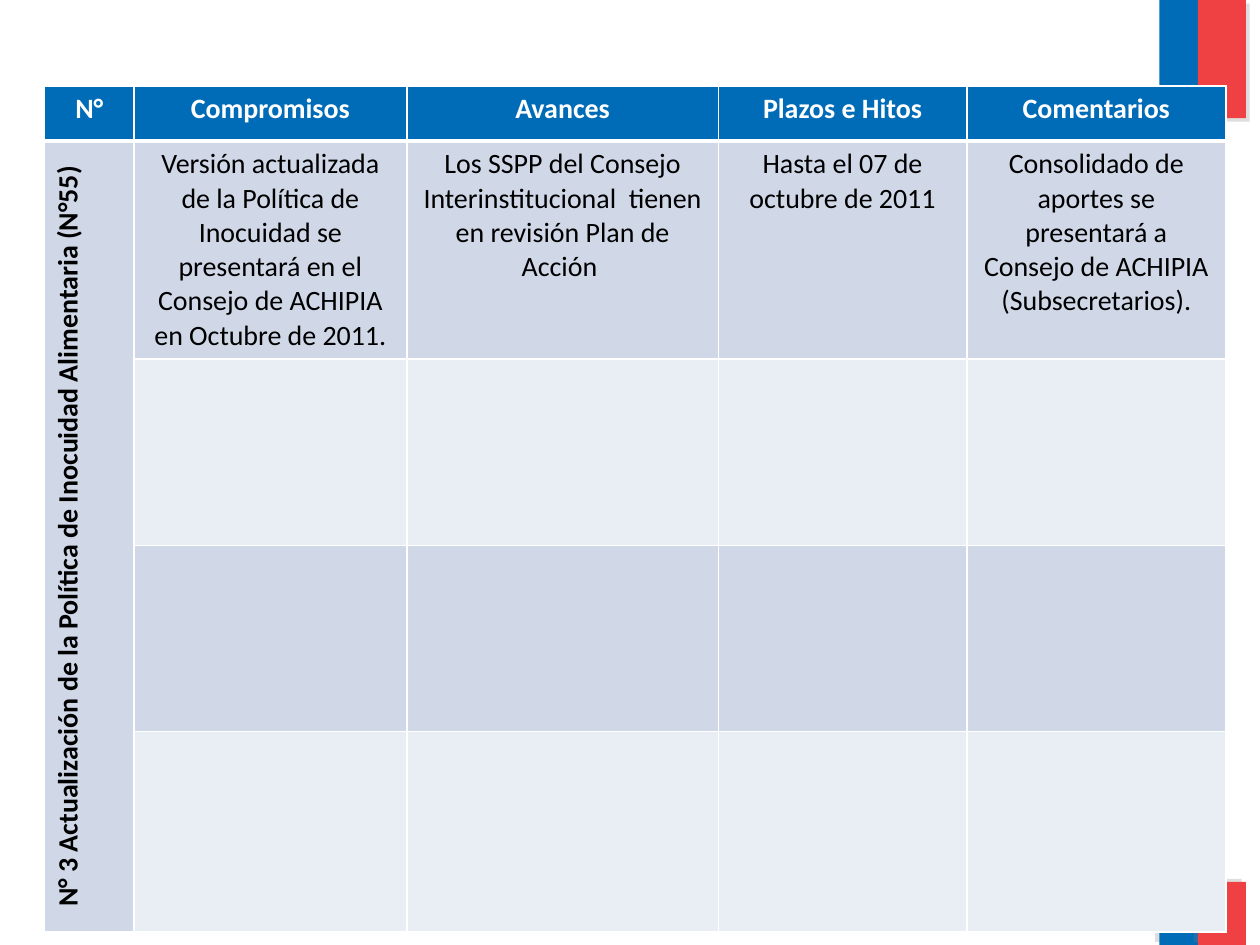
"""Build the commitments table slide with its blue and red corner bars."""
from lxml.etree import SubElement
from pptx import Presentation
from pptx.dml.color import RGBColor
from pptx.enum.shapes import MSO_SHAPE
from pptx.enum.text import PP_ALIGN
from pptx.oxml.ns import qn
from pptx.util import Pt

BLUE = RGBColor(0x00, 0x6C, 0xB7)
RED = RGBColor(0xEF, 0x41, 0x44)
WHITE = RGBColor(0xFF, 0xFF, 0xFF)
BLACK = RGBColor(0x00, 0x00, 0x00)
SHADOW = RGBColor(0x80, 0x80, 0x80)
BAND_DARK = RGBColor(0xD0, 0xD8, 0xE8)
BAND_LIGHT = RGBColor(0xE9, 0xED, 0xF4)

BARS = [
    (662.5, -0.5, 22, 68, BLUE, 45),
    (684.5, 0, 27.5, 67.5, RED, 45),
    (662.5, 504, 22, 36, BLUE, 215),
    (684.5, 504, 27.5, 36, RED, 215),
]
COL_WIDTHS = [51, 156, 178, 142, 148]
ROW_HEIGHTS = [31.5, 100, 106.5, 106.5, 114.5]
ROWS = [
    ["N°", "Compromisos", "Avances", "Plazos e Hitos", "Comentarios"],
    [
        "N° 3 Actualización de la Política de Inocuidad Alimentaria (N°55)",
        "Versión actualizada de la Política de Inocuidad se presentará en el "
        "Consejo de ACHIPIA en Octubre de 2011.",
        "Los SSPP del Consejo Interinstitucional  tienen en revisión Plan de Acción ",
        "Hasta el 07 de octubre de 2011",
        "Consolidado de aportes se presentará a Consejo de ACHIPIA (Subsecretarios).",
    ],
    [""] * 5,
    [""] * 5,
    [""] * 5,
]


def add_shadow(sp, angle):
    sp.shadow.inherit = False
    effects = sp._element.spPr.find(qn("a:effectLst"))
    shadow = SubElement(effects, qn("a:outerShdw"), blurRad="0", dist=str(Pt(3)),
                        dir=str(angle * 60000), algn="ctr", rotWithShape="0")
    color = SubElement(shadow, qn("a:srgbClr"), val=str(SHADOW))
    SubElement(color, qn("a:alpha"), val="25000")


def add_borders(cell, top, bottom):
    tc_pr = cell._tc.get_or_add_tcPr()
    for side, width in [("L", 1), ("R", 1), ("T", top), ("B", bottom)]:
        ln = SubElement(tc_pr, qn(f"a:ln{side}"), w=str(Pt(width)))
        fill = SubElement(ln, qn("a:solidFill"))
        SubElement(fill, qn("a:srgbClr"), val=str(WHITE))


prs = Presentation()
prs.slide_width, prs.slide_height = Pt(720), Pt(540)
s = prs.slides.add_slide(prs.slide_layouts[6])

for left, top, width, height, color, angle in BARS:
    sp = s.shapes.add_shape(MSO_SHAPE.RECTANGLE, Pt(left), Pt(top), Pt(width), Pt(height))
    sp.fill.solid()
    sp.fill.fore_color.rgb = color
    sp.line.fill.background()
    add_shadow(sp, angle)

table = s.shapes.add_table(len(ROWS), len(COL_WIDTHS), Pt(25.5), Pt(49),
                           Pt(sum(COL_WIDTHS)), Pt(sum(ROW_HEIGHTS))).table
for col, width in zip(table.columns, COL_WIDTHS):
    col.width = Pt(width)
for row, height in zip(table.rows, ROW_HEIGHTS):
    row.height = Pt(height)

for i, texts in enumerate(ROWS):
    for j, text in enumerate(texts):
        cell = table.cell(i, j)
        add_borders(cell, 3 if i == 1 else 1, 3 if i == 0 else 1)
        cell.fill.solid()
        band = BAND_DARK if i % 2 else BAND_LIGHT
        cell.fill.fore_color.rgb = BLUE if i == 0 else band
        if text:
            p = cell.text_frame.paragraphs[0]
            p.alignment = PP_ALIGN.CENTER
            r = p.add_run()
            r.text = text
            r.font.name = "Calibri"
            r.font.size = Pt(16)
            r.font.bold = i == 0 or j == 0
            r.font.color.rgb = WHITE if i == 0 else BLACK

topic = table.cell(1, 0)
topic.merge(table.cell(4, 0))
topic._tc.get_or_add_tcPr().set("vert", "vert270")

prs.save("out.pptx")
